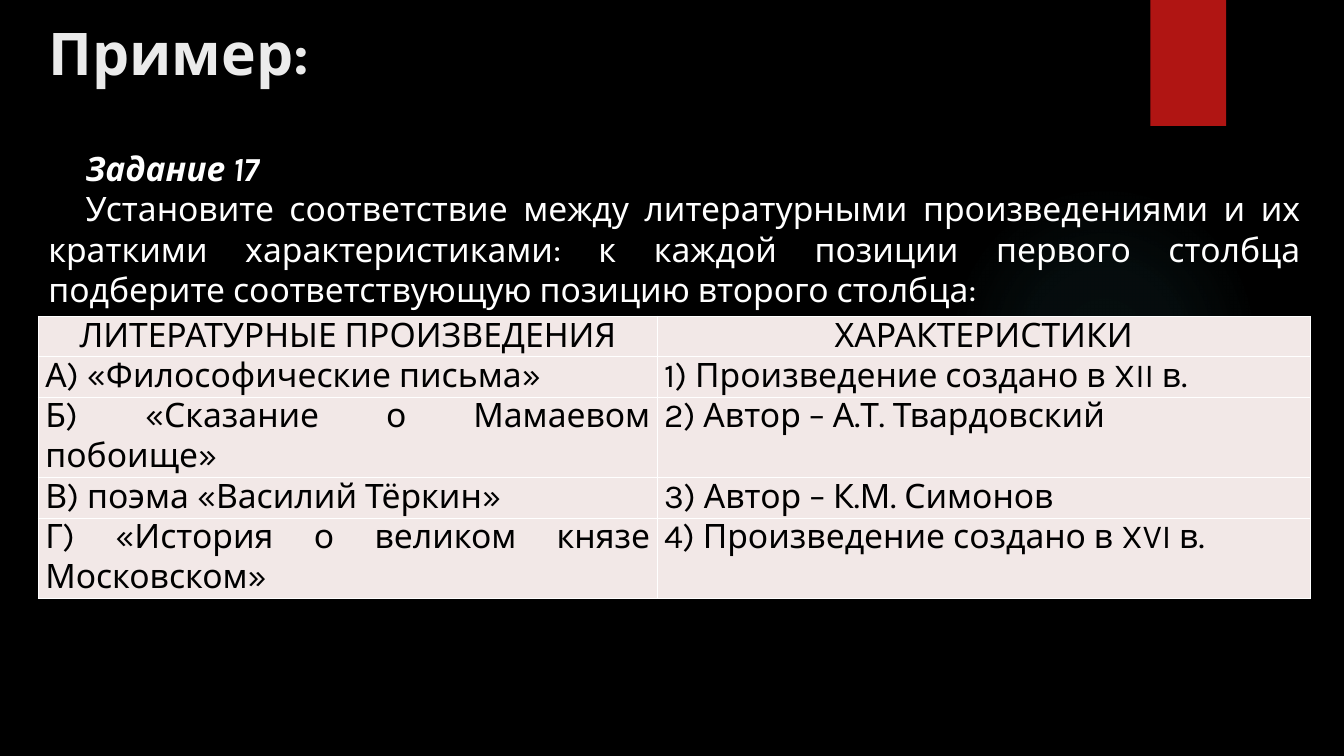
from lxml import etree
from pptx import Presentation
from pptx import util as u
from pptx.dml.color import RGBColor
from pptx.enum import shapes, text
from pptx.oxml import parse_xml
from pptx.oxml.ns import qn

# Content
HEADING = "Пример:"
TASK = "Задание 17"
INSTRUCTION = (
    "Установите соответствие между литературными произведениями и их "
    "краткими характеристиками: к каждой позиции первого столбца "
    "подберите соответствующую позицию второго столбца:"
)
MATCHES = [
    ("ЛИТЕРАТУРНЫЕ ПРОИЗВЕДЕНИЯ", "ХАРАКТЕРИСТИКИ"),
    ("А) «Философические письма»", "1) Произведение создано в XII\u00a0в."),
    ("Б) «Сказание о Мамаевом побоище»", "2) Автор – А.Т. Твардовский"),
    ("В) поэма «Василий Тёркин»", "3) Автор – К.М.\u00a0Симонов"),
    ("Г) «История о великом князе Московском»",
     "4) Произведение создано в XVI\u00a0в."),
]
LINES_PER_ROW = [1, 1, 2, 1, 2]


class Theme:
    font = "Karla"
    background = "000000"
    heading = "EBEBEB"
    light = "FFFFFF"
    dark = "000000"
    ribbon = "B01513"
    glow = "50B9C1"
    cell = "F2E8E7"
    heading_size = 42
    body_size = 24


LEFT, WIDTH = 27.4, 908.6
TABLE_TOP = 226
COLUMNS = [442, 466.6]
LINE_HEIGHT = 28.8
FIRST_INDENT = 26.6
CELL_INSET = 5
GLOW_STOPS = [(0, 7), (36, 6), (69, 0)]
ALIGN = text.PP_ALIGN
DRAWING_NS = "http://schemas.openxmlformats.org/drawingml/2006/main"


def paint(fill, color):
    fill.solid()
    fill.fore_color.rgb = RGBColor.from_string(color)


def write(paragraph, words, size=Theme.body_size, color=Theme.light,
          bold=False, italic=False, align=ALIGN.LEFT, indent=0):
    paragraph.alignment = align
    if indent:
        properties = paragraph._p.get_or_add_pPr()
        properties.set("marL", "0")
        properties.set("indent", str(u.Pt(indent)))
    run = paragraph.add_run()
    run.text = words
    run.font.name = Theme.font
    run.font.size = u.Pt(size)
    run.font.bold = bold
    run.font.italic = italic
    run.font.color.rgb = RGBColor.from_string(color)


def add_plain_shape(slide, kind, left, top, width, height):
    shape = slide.shapes.add_shape(
        kind, u.Pt(left), u.Pt(top), u.Pt(width), u.Pt(height))
    shape.shadow.inherit = False
    shape.line.fill.background()
    return shape


def radial_fill(shape, color, stops):
    stop_xml = "".join(
        f'<a:gs pos="{position * 1000}"><a:srgbClr val="{color}">'
        f'<a:alpha val="{opacity * 1000}"/></a:srgbClr></a:gs>'
        for position, opacity in stops)
    gradient = parse_xml(
        f'<a:gradFill xmlns:a="{DRAWING_NS}"><a:gsLst>{stop_xml}</a:gsLst>'
        '<a:path path="circle"><a:fillToRect l="50000" t="50000" '
        'r="50000" b="50000"/></a:path></a:gradFill>')
    shape._element.spPr.find(qn("a:prstGeom")).addnext(gradient)


def border_cell(cell, color):
    properties = cell._tc.get_or_add_tcPr()
    for side in ("lnL", "lnR", "lnT", "lnB"):
        line = etree.SubElement(properties, qn(f"a:{side}"), w=str(u.Pt(1)))
        solid = etree.SubElement(line, qn("a:solidFill"))
        etree.SubElement(solid, qn("a:srgbClr"), val=color)


def main():
    deck = Presentation()
    deck.slide_width, deck.slide_height = u.Pt(960), u.Pt(540)
    slide = deck.slides.add_slide(deck.slide_layouts[5])
    paint(slide.background.fill, Theme.background)

    # Glow and ribbon
    glow = add_plain_shape(slide, shapes.MSO_SHAPE.OVAL,
                           677.5, 131.8, 221.8, 221.8)
    radial_fill(glow, Theme.glow, GLOW_STOPS)
    ribbon = add_plain_shape(slide, shapes.MSO_SHAPE.RECTANGLE,
                             821.8, 0, 54, 90)
    paint(ribbon.fill, Theme.ribbon)

    # Heading
    heading = slide.shapes.title
    heading.left, heading.top = u.Pt(LEFT), u.Pt(8)
    heading.width, heading.height = u.Pt(741), u.Pt(59)
    heading.text_frame.auto_size = text.MSO_AUTO_SIZE.NONE
    heading.text_frame.vertical_anchor = text.MSO_ANCHOR.MIDDLE
    write(heading.text_frame.paragraphs[0], HEADING, bold=True,
          size=Theme.heading_size, color=Theme.heading)

    # Task
    task = slide.shapes.add_textbox(
        u.Pt(LEFT), u.Pt(102.2), u.Pt(WIDTH), u.Pt(123.8)).text_frame
    task.word_wrap = True
    write(task.paragraphs[0], TASK, bold=True, italic=True,
          indent=FIRST_INDENT)
    write(task.add_paragraph(), INSTRUCTION, align=ALIGN.JUSTIFY,
          indent=FIRST_INDENT)

    # Matching table
    table = slide.shapes.add_table(
        len(MATCHES), len(COLUMNS), u.Pt(LEFT), u.Pt(TABLE_TOP), u.Pt(WIDTH),
        u.Pt(LINE_HEIGHT * sum(LINES_PER_ROW))).table
    table.first_row = table.horz_banding = False
    for column, width in zip(table.columns, COLUMNS):
        column.width = u.Pt(width)
    for row, lines in zip(table.rows, LINES_PER_ROW):
        row.height = u.Pt(LINE_HEIGHT * lines)
    for r, match in enumerate(MATCHES):
        for c, words in enumerate(match):
            cell = table.cell(r, c)
            cell.margin_left = cell.margin_right = u.Pt(CELL_INSET)
            cell.margin_top = cell.margin_bottom = 0
            border_cell(cell, Theme.light)
            paint(cell.fill, Theme.cell)
            write(cell.text_frame.paragraphs[0], words, color=Theme.dark,
                  align=ALIGN.JUSTIFY if r else ALIGN.CENTER)

    deck.save("out.pptx")


if __name__ == "__main__":
    main()
